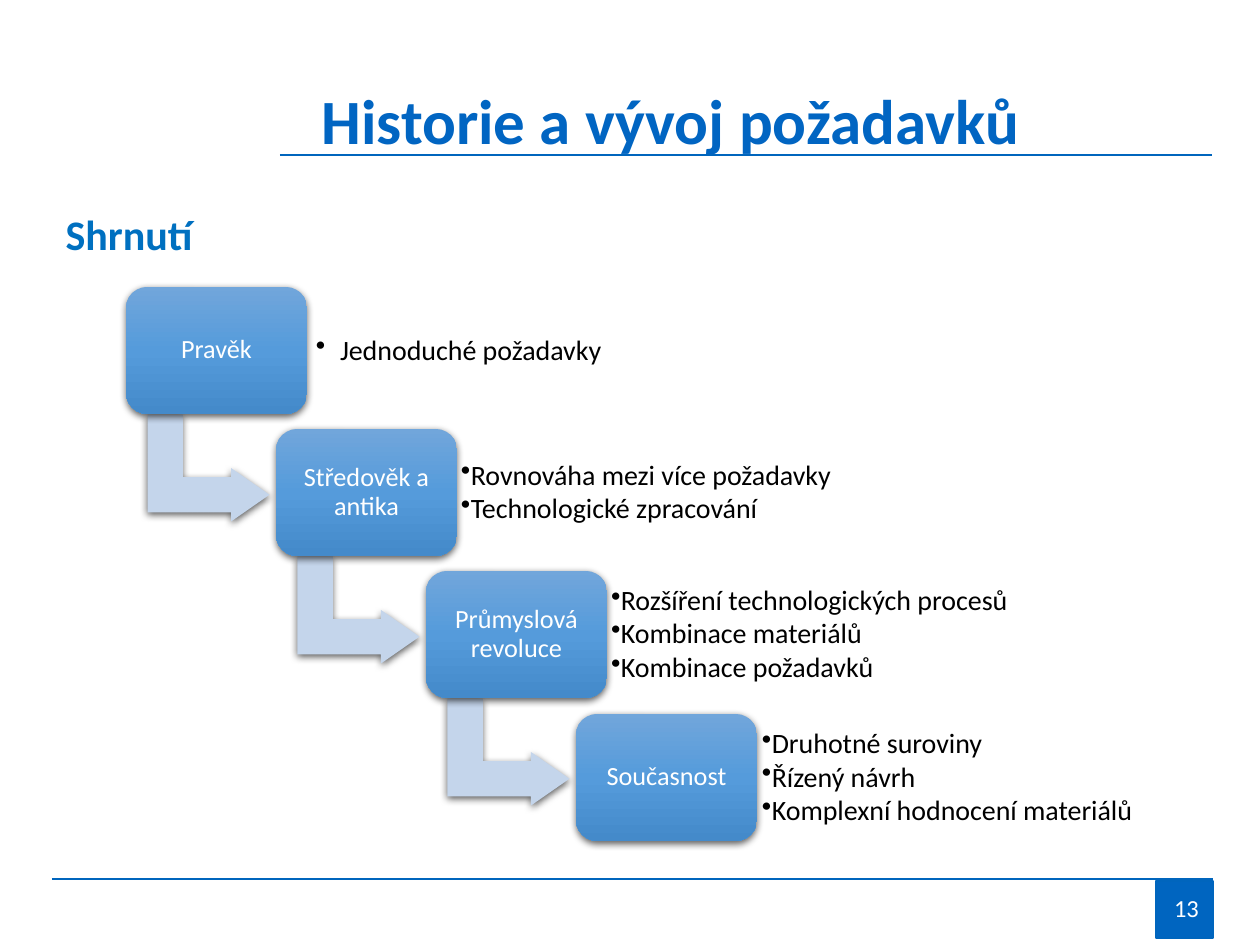
"""Build the summary slide on the history of material requirements."""

import lxml.etree
import pptx
import pptx.dml.color
import pptx.enum.shapes
import pptx.enum.text
import pptx.oxml.ns
import pptx.util

PX = 914400 // 126
COLORS = {
    "rule": "0065BD", "badge": "0065C0", "title": "0165C2", "heading": "0070C0",
    "arrow": "C4D5EB", "white": "FFFFFF", "black": "000000",
}
GRADIENT = [(0, "71A6DB"), (50000, "559BDB"), (100000, "448ACA")]
STAGES = [
    ("Pravěk", ["Jednoduché požadavky"], 867, 9, 24),
    ("Středověk a antika",
     ["Rovnováha mezi více požadavky", "Technologické zpracování"], 700, 4, 8),
    ("Průmyslová revoluce",
     ["Rozšíření technologických procesů", "Kombinace materiálů", "Kombinace požadavků"],
     551, 4, 8),
    ("Současnost",
     ["Druhotné suroviny", "Řízený návrh", "Komplexní hodnocení materiálů"], 456, 5, 8),
]
ALIGN = pptx.enum.text.PP_ALIGN
ANCHOR = pptx.enum.text.MSO_ANCHOR
SHAPE = pptx.enum.shapes.MSO_SHAPE
qn = pptx.oxml.ns.qn


def format_paragraph(paragraph, size, color, align=ALIGN.LEFT, bold=False):
    paragraph.alignment = align
    for run in paragraph.runs:
        run.font.name = "Calibri"
        run.font.size = pptx.util.Pt(size)
        run.font.bold = bold
        run.font.color.rgb = pptx.dml.color.RGBColor.from_string(COLORS[color])


def add_shadow(shape):
    shape.shadow.inherit = False
    effects = shape._element.spPr.find(qn("a:effectLst"))
    shadow = lxml.etree.SubElement(
        effects, qn("a:outerShdw"), blurRad="57150", dist="19050",
        dir="5400000", algn="ctr", rotWithShape="0")
    color = lxml.etree.SubElement(shadow, qn("a:srgbClr"), val=COLORS["black"])
    lxml.etree.SubElement(color, qn("a:alpha"), val="63000")


presentation = pptx.Presentation()
presentation.slide_width = 1260 * PX
presentation.slide_height = 945 * PX
slide = presentation.slides.add_slide(presentation.slide_layouts[1])
shapes = slide.shapes

for left, right, y, weight in [(280, 1212, 155, 1.5), (52, 1213, 879, 1)]:
    rule = shapes.add_connector(
        pptx.enum.shapes.MSO_CONNECTOR.STRAIGHT, left * PX, y * PX, right * PX, y * PX)
    rule.line.color.rgb = pptx.dml.color.RGBColor.from_string(COLORS["rule"])
    rule.line.width = pptx.util.Pt(weight)
    lxml.etree.SubElement(rule._element.spPr, qn("a:effectLst"))

badge = shapes.add_shape(SHAPE.RECTANGLE, 1156 * PX, 881 * PX, 57 * PX, 57 * PX)
badge.shadow.inherit = False
badge.fill.solid()
badge.fill.fore_color.rgb = pptx.dml.color.RGBColor.from_string(COLORS["badge"])
badge.line.color.rgb = pptx.dml.color.RGBColor.from_string(COLORS["rule"])
badge.line.width = pptx.util.Pt(1)

page_number = shapes.add_textbox(1158 * PX, 887 * PX, 57 * PX, 43 * PX)
page_number.text_frame.word_wrap = True
page_number.text_frame.text = "13"
format_paragraph(page_number.text_frame.paragraphs[0], 14, "white", ALIGN.CENTER)

title = shapes.title
body = slide.placeholders[1]
for placeholder, text, (left, top, width, height) in [
    (title, "Historie a vývoj požadavků", (309, 37, 916, 93)),
    (body, "Shrnutí", (28, 202, 1237, 690)),
]:
    placeholder.left, placeholder.top = left * PX, top * PX
    placeholder.width, placeholder.height = width * PX, height * PX
    placeholder.text_frame.text = text
    placeholder.text_frame.auto_size = pptx.enum.text.MSO_AUTO_SIZE.NONE
    placeholder.text_frame.vertical_anchor = ANCHOR.TOP

title_paragraph = title.text_frame.paragraphs[0]
title_paragraph.line_spacing = 1.5
format_paragraph(title_paragraph, 36, "title", bold=True)

heading = body.text_frame.paragraphs[0]
properties = heading._p.get_or_add_pPr()
properties.set("marL", str(25 * PX))
properties.set("indent", "0")
lxml.etree.SubElement(properties, qn("a:buNone"))
heading.space_before = pptx.util.Pt(0)
format_paragraph(heading, 24, "heading", ALIGN.JUSTIFY, bold=True)

for index, (stage, points, width, inset, hanging) in enumerate(STAGES):
    left = 126 + 150 * index
    top = 287 + 427 * index // 3

    if index < len(STAGES) - 1:
        arrow = shapes.add_shape(
            SHAPE.BENT_UP_ARROW, (left + 29) * PX, (top + 120) * PX, 107 * PX, 122 * PX)
        arrow.rotation = 90
        for position, adjustment in enumerate([0.33, 0.25, 0.36]):
            arrow.adjustments[position] = adjustment
        arrow.fill.solid()
        arrow.fill.fore_color.rgb = pptx.dml.color.RGBColor.from_string(COLORS["arrow"])
        arrow.line.fill.background()
        add_shadow(arrow)

    box = shapes.add_shape(
        SHAPE.ROUNDED_RECTANGLE, left * PX, top * PX, 181 * PX, 127 * PX)
    box.fill.gradient()
    box.fill.gradient_angle = 270
    stops = box._element.spPr.find(qn("a:gradFill")).find(qn("a:gsLst"))
    stops.clear()
    for position, color in GRADIENT:
        stop = lxml.etree.SubElement(stops, qn("a:gs"), pos=str(position))
        lxml.etree.SubElement(stop, qn("a:srgbClr"), val=color)
    box.line.fill.background()
    add_shadow(box)
    box.text_frame.text = stage
    box.text_frame.paragraphs[0].line_spacing = 0.9
    format_paragraph(box.text_frame.paragraphs[0], 15, "white", ALIGN.CENTER)

    details = shapes.add_textbox(
        (left + 181) * PX, (top + 13) * PX, width * PX, 102 * PX)
    details.text_frame.text = "\n".join(points)

    for frame, margin in [(box.text_frame, 14), (details.text_frame, inset)]:
        frame.word_wrap = True
        frame.vertical_anchor = ANCHOR.MIDDLE
        frame.margin_left = frame.margin_right = margin * PX
        frame.margin_top = frame.margin_bottom = margin * PX

    for paragraph in details.text_frame.paragraphs:
        paragraph.level = 1
        properties = paragraph._p.get_or_add_pPr()
        properties.set("marL", str(hanging * PX))
        properties.set("indent", str(-hanging * PX))
        lxml.etree.SubElement(properties, qn("a:buChar"), char="•")
        paragraph.line_spacing = 0.9
        paragraph.space_after = pptx.util.Pt(2)
        format_paragraph(paragraph, 16, "black")

presentation.save("out.pptx")
